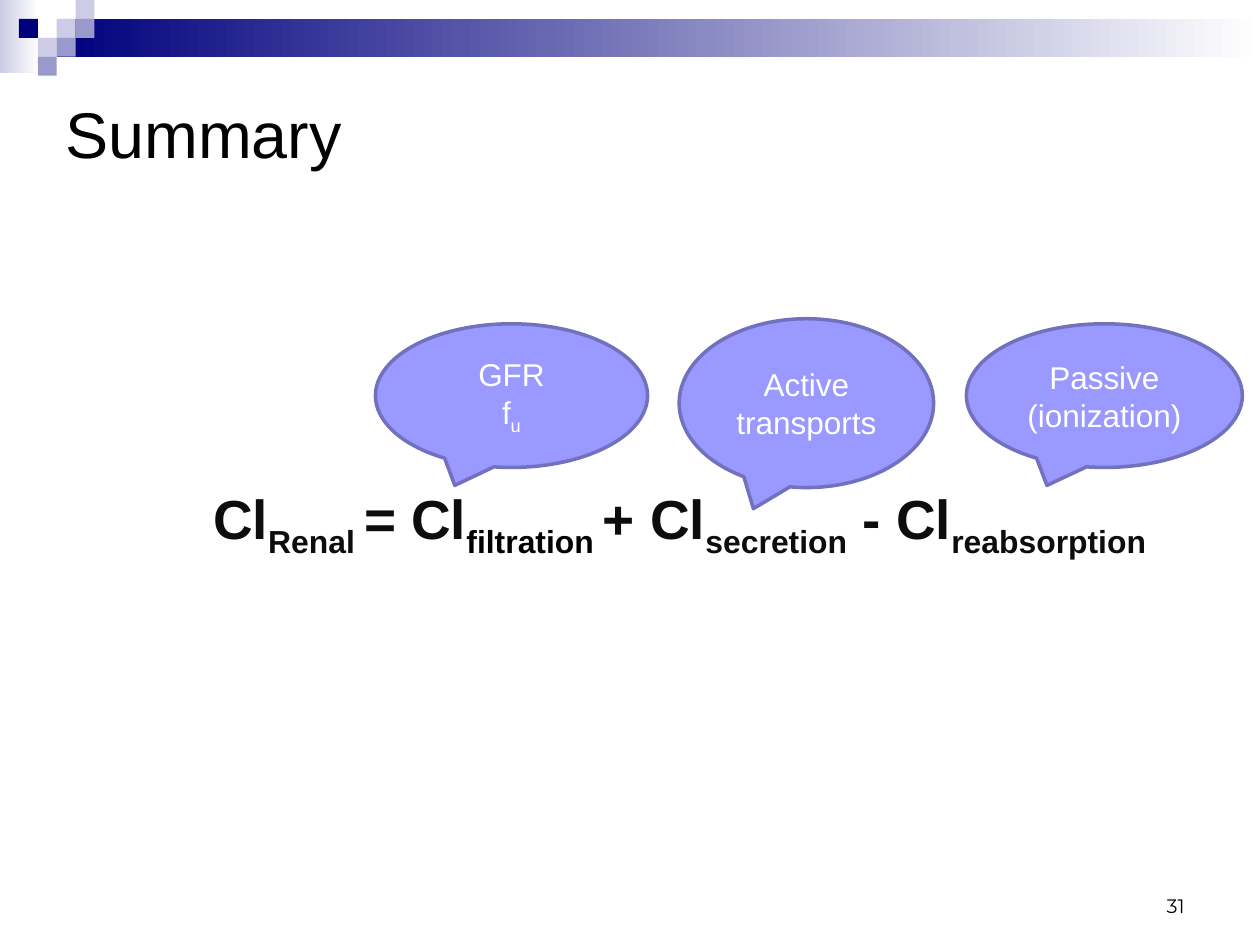
from pptx import Presentation
from pptx.dml.color import RGBColor
from pptx.enum.shapes import MSO_SHAPE
from pptx.enum.text import MSO_ANCHOR, PP_ALIGN
from pptx.util import Inches, Pt

COLORS = {
    "navy": "00007D",
    "mist": "CCCCE6",
    "slate": "9999CC",
    "white": "FFFFFF",
    "black": "000000",
    "ink": "0D0D0D",
    "bubble": "9999FF",
    "outline": "7171BD",
}
TILE = 0.15
TILES = [
    (3, 1, "mist"), (4, 0, "mist"), (4, 1, "slate"), (2, 2, "mist"),
    (1, 1, "navy"), (3, 2, "slate"), (2, 3, "slate"),
]
EQUATION = [
    ("Cl", False, "ink"), ("Renal ", True, "ink"),
    ("= Cl", False, "ink"), ("filtration ", True, "black"),
    ("+ Cl", False, "ink"), ("secretion", True, "ink"),
    (" - Cl", False, "ink"), ("reabsorption", True, "ink"),
]
CALLOUTS = [
    ((2.98, 2.57, 2.16, 1.14), [[("GFR", False, "white")],
                                [("f", False, "white"), ("u", True, "white")]]),
    ((5.39, 2.53, 2.02, 1.34), [[("Active transports", False, "white")]]),
    ((7.67, 2.57, 2.19, 1.14), [[("Passive (ionization)", False, "white")]]),
]


def color(name):
    return RGBColor.from_string(COLORS[name])


def add_block(page, kind, place, fill):
    block = page.shapes.add_shape(kind, *map(Inches, place))
    block.shadow.inherit = False
    block.fill.solid()
    block.fill.fore_color.rgb = color(fill)
    block.line.fill.background()
    return block


def add_fade(page, place, start):
    fade = add_block(page, MSO_SHAPE.RECTANGLE, place, start)
    fade.fill.gradient()
    fade.fill.gradient_angle = 0
    for stop, position, name in zip(fade.fill.gradient_stops, (0, 1), (start, "white")):
        stop.position = position
        stop.color.rgb = color(name)


def write(frame, lines, size, align, anchor, font="Arial", bold=False):
    frame.vertical_anchor = anchor
    for index, spans in enumerate(lines):
        paragraph = frame.add_paragraph() if index else frame.paragraphs[0]
        paragraph.alignment = align
        paragraph.font.name = font
        paragraph.font.size = Pt(size)
        paragraph.font.bold = bold
        for text, subscript, name in spans:
            span = paragraph.add_run()
            span.text = text
            span.font.color.rgb = color(name)
            if subscript:
                span._r.get_or_add_rPr().set("baseline", "-25000")


def add_text(page, place, spans, size, align, anchor, wrap=True, **style):
    box = page.shapes.add_textbox(*map(Inches, place))
    box.text_frame.word_wrap = wrap
    write(box.text_frame, [spans], size, align, anchor, **style)


def add_callout(page, place, lines):
    callout = add_block(page, MSO_SHAPE.OVAL_CALLOUT, place, "bubble")
    callout.line.color.rgb = color("outline")
    callout.line.width = Pt(2)
    callout.text_frame.word_wrap = True
    write(callout.text_frame, lines, 18, PP_ALIGN.CENTER, MSO_ANCHOR.MIDDLE)


def add_banner(page):
    add_fade(page, (0, 0, 0.31, 0.58), "mist")
    add_fade(page, (3 * TILE, TILE, 10 - 3 * TILE, 2 * TILE), "navy")
    for column, row, fill in TILES:
        place = (column * TILE, row * TILE, TILE, TILE)
        add_block(page, MSO_SHAPE.RECTANGLE, place, fill)


def main():
    deck = Presentation()
    deck.slide_width, deck.slide_height = Inches(10), Inches(7.5)
    page = deck.slides.add_slide(deck.slide_layouts[6])
    add_banner(page)
    add_text(page, (1.29, 3.71, 8.21, 0.87), EQUATION, 31.4,
             PP_ALIGN.CENTER, MSO_ANCHOR.MIDDLE, wrap=False, bold=True)
    add_text(page, (0.42, 0.68, 9.16, 0.75), [("Summary", False, "black")], 36.9,
             PP_ALIGN.LEFT, MSO_ANCHOR.MIDDLE)
    add_text(page, (7.17, 6.83, 2.33, 0.5), [("31", False, "black")], 11.1,
             PP_ALIGN.RIGHT, MSO_ANCHOR.BOTTOM, font="Montserrat")
    for place, lines in CALLOUTS:
        add_callout(page, place, lines)
    deck.save("out.pptx")


if __name__ == "__main__":
    main()
